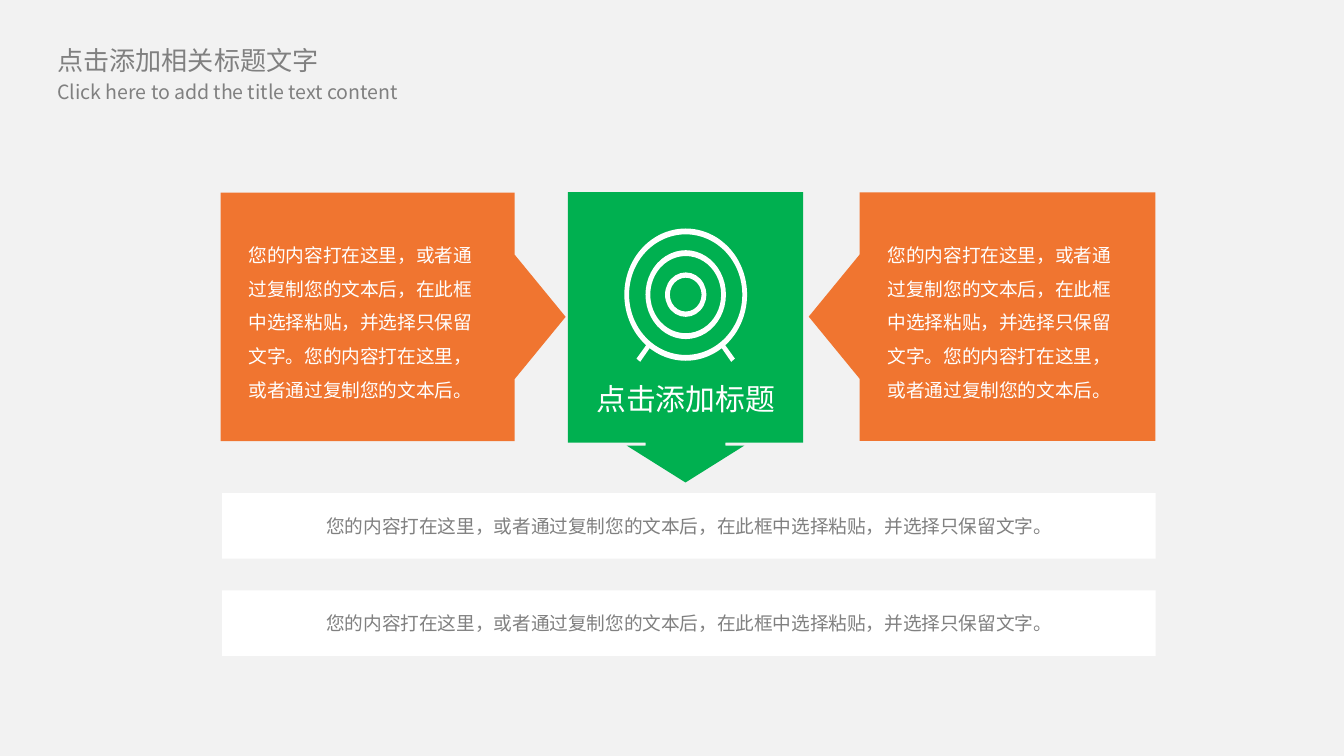
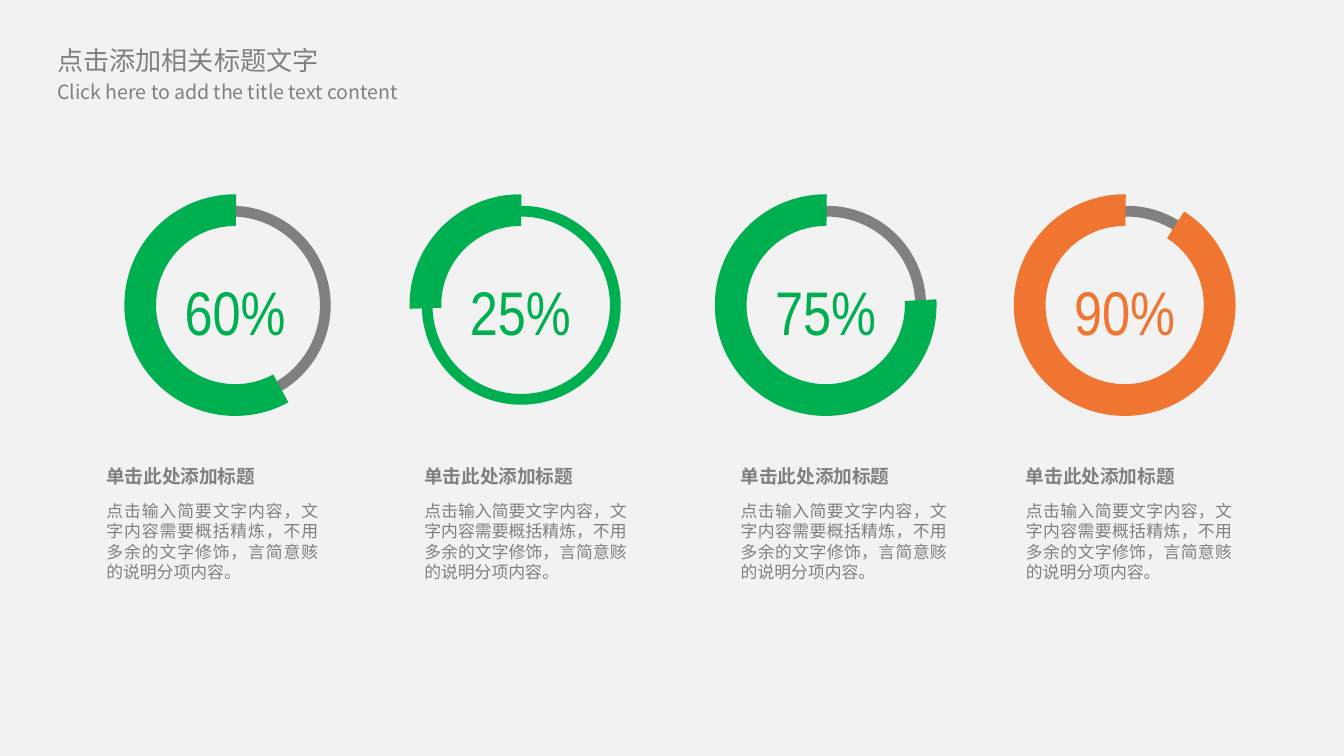
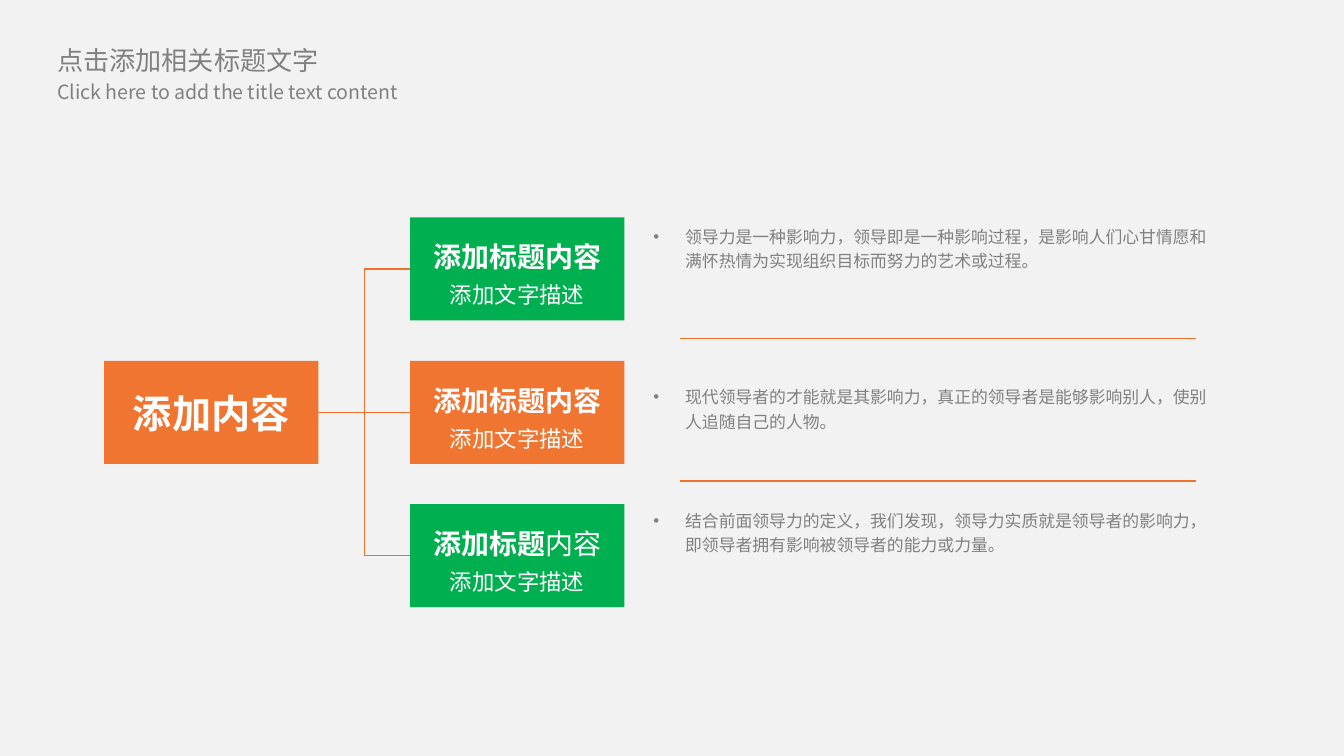
from dataclasses import dataclass

from lxml import etree
from pptx import Presentation
from pptx.dml.color import RGBColor
from pptx.enum.shapes import MSO_CONNECTOR, MSO_SHAPE
from pptx.enum.text import MSO_ANCHOR, MSO_AUTO_SIZE, PP_ALIGN
from pptx.oxml.ns import qn
from pptx.util import Cm, Pt

RECT, CALLOUT, ARC = MSO_SHAPE.RECTANGLE, MSO_SHAPE.UP_ARROW_CALLOUT, MSO_SHAPE.BLOCK_ARC
STRAIGHT, ELBOW = MSO_CONNECTOR.STRAIGHT, MSO_CONNECTOR.ELBOW
TOP, MIDDLE = MSO_ANCHOR.TOP, MSO_ANCHOR.MIDDLE
LEFT, CENTER, JUSTIFY = PP_ALIGN.LEFT, PP_ALIGN.CENTER, PP_ALIGN.JUSTIFY
FIT, FIXED = MSO_AUTO_SIZE.SHAPE_TO_FIT_TEXT, MSO_AUTO_SIZE.NONE


@dataclass(frozen=True)
class Theme:
    paper: str = "F2F2F2"
    white: str = "FFFFFF"
    grey: str = "808080"
    green: str = "00B050"
    orange: str = "F07530"
    line: str = "EF712A"
    font: str = "Noto Sans CJK SC"
    number_font: str = "Arial Narrow"
    bullet_font: str = "Arial"
    small: float = 9
    body: float = 10
    subtitle: float = 10.5
    caption: float = 12
    title: float = 14
    heading: float = 15
    label: float = 16
    root: float = 21
    number: float = 33


T = Theme()


def place(s, kind, x, y, w, h, fill=None, rotation=0, adjust=()):
    box = Cm(x), Cm(y), Cm(w), Cm(h)
    if kind is None:
        return s.shapes.add_textbox(*box)
    sp = s.shapes.add_shape(kind, *box)
    sp.shadow.inherit = False
    sp.fill.solid()
    sp.fill.fore_color.rgb = RGBColor.from_string(fill)
    sp.line.fill.background()
    sp.rotation = rotation
    for i, value in enumerate(adjust):
        sp.adjustments[i] = value
    return sp


def write(sp, text, size=T.body, color=T.grey, font=T.font, bold=False, align=LEFT,
          spacing=None, inset=(0.25, 0.13), wrap=True, anchor=TOP, fit=FIT,
          bullet=False, same_line=False):
    tf = sp.text_frame
    tf.word_wrap, tf.vertical_anchor, tf.auto_size = wrap, anchor, fit
    tf.margin_left = tf.margin_right = Cm(inset[0])
    tf.margin_top = tf.margin_bottom = Cm(inset[1])
    p = tf.paragraphs[-1]
    if p.runs and not same_line:
        p = tf.add_paragraph()
    p.alignment = align
    if spacing:
        p.line_spacing = spacing
    if bullet:
        pPr = p._p.get_or_add_pPr()
        pPr.set("marL", str(Cm(0.6)))
        pPr.set("indent", str(-Cm(0.6)))
        etree.SubElement(pPr, qn("a:buFont"), typeface=T.bullet_font)
        etree.SubElement(pPr, qn("a:buChar"), char="•")
    r = p.add_run()
    r.text = text
    r.font.size, r.font.bold, r.font.name = Pt(size), bold, font
    r.font.color.rgb = RGBColor.from_string(color)
    etree.SubElement(r._r.get_or_add_rPr(), qn("a:ea"), typeface=font)


prs = Presentation()
prs.slide_width, prs.slide_height = Cm(25.4), Cm(14.29)
background = prs.slide_master.background.fill
background.solid()
background.fore_color.rgb = RGBColor.from_string(T.paper)

slides = [prs.slides.add_slide(prs.slide_layouts[6]) for _ in range(3)]
for s in slides:
    write(place(s, None, 0.89, 1.42, 7.19, 0.64), "Click here to add the title text content",
          size=T.subtitle, inset=(0.2, 0.1), wrap=False)
    write(place(s, None, 0.9, 0.74, 5.99, 0.79), "点击添加相关标题文字",
          size=T.title, inset=(0.18, 0.1))
target_slide, dial_slide, tree_slide = slides

s = target_slide
sentence = "您的内容打在这里，或者通过复制您的文本后，在此框中选择粘贴，并选择只保留文字。"
for x, y, h, rotation, vert in ((5.08, 2.73, 6.52, 90, "vert270"),
                                (16.21, 2.71, 6.55, 270, "vert")):
    sp = place(s, CALLOUT, x, y, 4.7, h, T.orange, rotation, (0.338, 0.25, 0.205, 0.863))
    write(sp, sentence + "您的内容打在这里，或者通过复制您的文本后。", color=T.white,
          spacing=1.5, inset=(0.18, 0.53), anchor=MIDDLE, fit=FIXED)
    sp.text_frame._txBody.bodyPr.set("vert", vert)

for y in (9.32, 11.16):
    write(place(s, RECT, 4.2, y, 17.64, 1.24, T.white), sentence, align=CENTER,
          inset=(0.18, 0.08), wrap=False, anchor=MIDDLE, fit=FIXED)

place(s, CALLOUT, 10.73, 3.63, 4.45, 5.49, T.green, 180, (0.338, 0.25, 0.157, 0.863))

rings = ((1.16, 1.25), (1.07, 1.14), (0.76, 0.84), (0.67, 0.73), (0.39, 0.42), (0.3, 0.32))
leg = ((0.75, 0.96), (0.93, 1.21), (0.86, 1.27), (0.68, 1.01))
outlines = [((rx, 0), (0, ry), (-rx, 0), (0, -ry), (rx, 0)) for rx, ry in rings]
outlines += [[(side * x, y) for x, y in leg] for side in (1, -1)]
outlines = [[(Cm(12.96 + x), Cm(5.57 + y)) for x, y in points] for points in outlines]
builder = s.shapes.build_freeform(*outlines[0][0])
for i, points in enumerate(outlines):
    if i:
        builder.move_to(*points[0])
    builder.add_line_segments(points[1:])
target = builder.convert_to_shape()
edges = list(target._element.iter(qn("a:lnTo")))
for i, edge in enumerate(edges[:4 * len(rings)]):
    rx, ry = rings[i // 4]
    arc = etree.Element(qn("a:arcTo"), wR=str(Cm(rx)), hR=str(Cm(ry)),
                        stAng=str(i % 4 * 5400000), swAng="5400000")
    edge.getparent().replace(edge, arc)
target.shadow.inherit = False
target.fill.solid()
target.fill.fore_color.rgb = RGBColor.from_string(T.white)
target.line.fill.background()

write(place(s, None, 10.99, 7.07, 3.94, 0.94), "点击添加标题", size=T.label, color=T.white,
      align=CENTER, wrap=False)

s = dial_slide
wide_turn = (153.3, 67.417)
dials = (
    ("60%", 2.35, 2.49, (35.6, 140.339), T.grey, 106.695, T.green, 1.76, 4.5),
    ("25%", 7.74, 7.97, wide_turn, T.green, 176.742, T.green, 7.77, 4.32),
    ("75%", 13.51, 13.74, wide_turn, T.grey, 68.121, T.green, 13.75, 4.39),
    ("90%", 19.16, 19.41, wide_turn, T.grey, 35.347, T.orange, 19.14, 4.39),
)
for percent, x, track_x, (turn, track_start), track, start, color, text_x, text_w in dials:
    place(s, ARC, track_x, 3.89, 3.76, 3.76, track, turn, (track_start, 15.973, 0.054))
    place(s, ARC, x, 3.67, 4.19, 4.19, color, 243.5, (start, 16.236, 0.143))
    write(place(s, None, x + 0.8, 5.05, 2.59, 1.68), percent, size=T.number, color=color,
          font=T.number_font, align=CENTER, wrap=False)
    write(place(s, None, text_x, 9.34, text_w, 1.8),
          "点击输入简要文字内容，文字内容需要概括精炼，不用多余的文字修饰，言简意赅的说明分项内容。",
          size=T.small, align=JUSTIFY)
    write(place(s, None, text_x, 8.66, 4.75, 0.69), "单击此处添加标题", bold=True)

s = tree_slide
box_w, box_h, top, pitch = 4.05, 1.95, 4.11, 2.71
in_box = dict(color=T.white, align=CENTER, anchor=MIDDLE, fit=FIXED)
root = place(s, RECT, 1.97, top + pitch, box_w, box_h, T.orange)
write(root, "添加内容", size=T.root, bold=True, **in_box)
branches = (
    (T.green, "添加标题内容", "", 4.08,
     "领导力是一种影响力，领导即是一种影响过程，是影响人们心甘情愿和满怀热情为实现组织目标而努力的艺术或过程。"),
    (T.orange, "添加标题内容", "", 7.11,
     "现代领导者的才能就是其影响力，真正的领导者是能够影响别人，使别人追随自己的人物。"),
    (T.green, "添加标题", "内容", 9.45,
     "结合前面领导力的定义，我们发现，领导力实质就是领导者的影响力，即领导者拥有影响被领导者的能力或力量。"),
)
lines = []
for i, (fill, heading, light_end, note_y, note) in enumerate(branches):
    sp = place(s, RECT, 7.75, top + i * pitch, box_w, box_h, fill)
    write(sp, heading, size=T.heading, bold=True, spacing=1.3, **in_box)
    if light_end:
        write(sp, light_end, size=T.heading, spacing=1.3, same_line=True, **in_box)
    write(sp, "添加文字描述", size=T.caption, spacing=1.3, **in_box)
    write(place(s, None, 12.1, note_y, 10.95, 1.17), note, size=T.small, spacing=1.2,
          bullet=True)
    link = s.shapes.add_connector(ELBOW, 0, 0, 0, 0)
    link.begin_connect(root, 3)
    link.end_connect(sp, 1)
    lines.append(link)
for y in (6.4, 9.09):
    lines.append(s.shapes.add_connector(STRAIGHT, Cm(12.85), Cm(y), Cm(22.61), Cm(y)))
for line in lines:
    line.line.color.rgb = RGBColor.from_string(T.line)
    line.line.width = Pt(0.75)
    etree.SubElement(line._element.spPr, qn("a:effectLst"))

prs.save("out.pptx")
